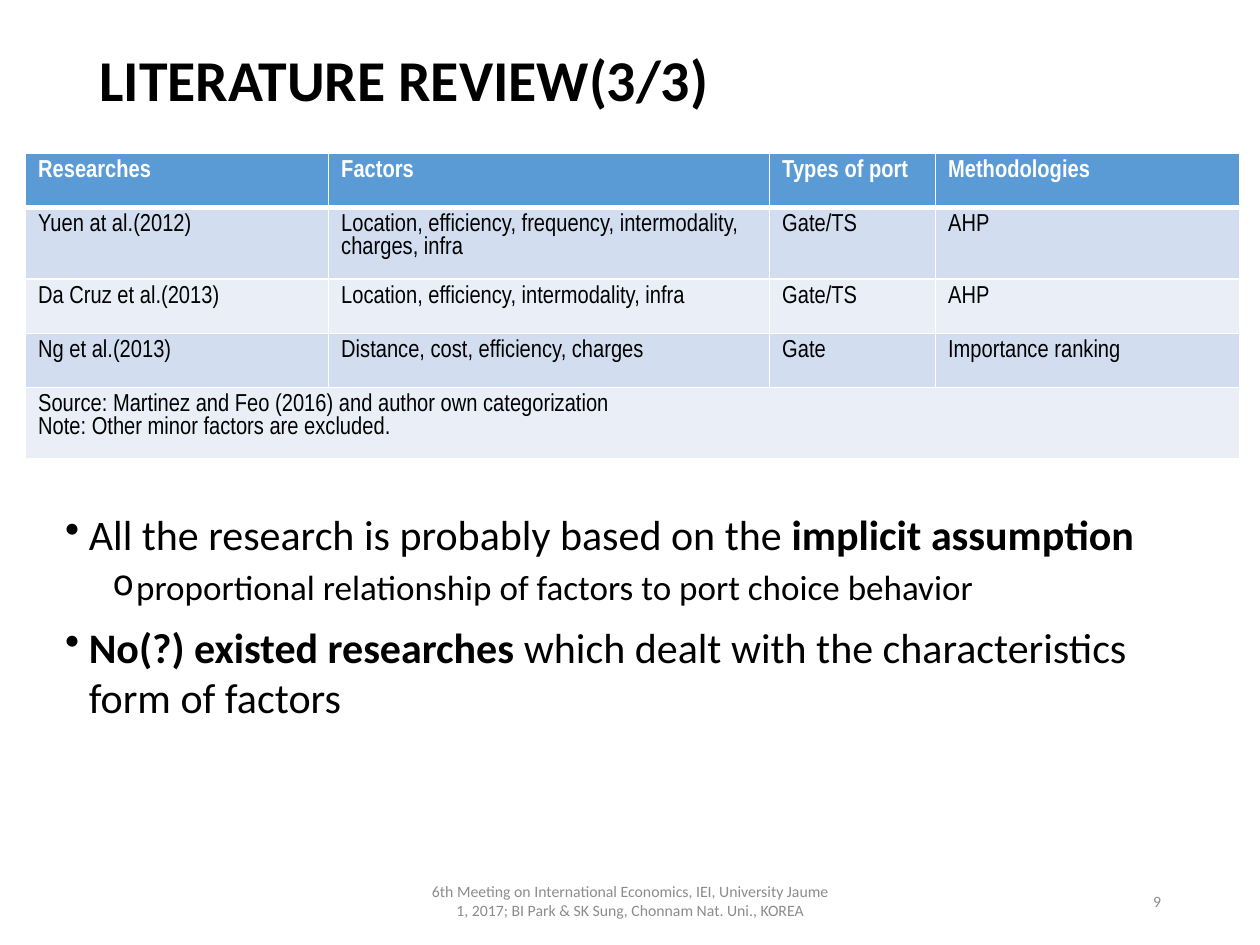
from dataclasses import dataclass

from lxml import etree
from pptx import Presentation
from pptx.dml.color import RGBColor
from pptx.enum.text import MSO_ANCHOR, PP_ALIGN
from pptx.oxml.ns import qn
from pptx.util import Pt

TOP, MID = MSO_ANCHOR.TOP, MSO_ANCHOR.MIDDLE
LEFT, MIDST, RIGHT = PP_ALIGN.LEFT, PP_ALIGN.CENTER, PP_ALIGN.RIGHT
BLACK = RGBColor(0x00, 0x00, 0x00)
WHITE = RGBColor(0xFF, 0xFF, 0xFF)
GRAY = RGBColor(0x8C, 0x8C, 0x8C)
BLUE = RGBColor(0x5B, 0x9B, 0xD5)
BANDS = (RGBColor(0xD2, 0xDE, 0xEF), RGBColor(0xEA, 0xEF, 0xF7))
SANS, NARROW = "Calibri", "Arial Narrow"
HANG = 13.5


@dataclass(frozen=True)
class Box:
    left: float
    top: float
    width: float
    height: float


@dataclass(frozen=True)
class Label:
    box: Box
    text: str
    size: float
    color: RGBColor
    bold: bool = False
    align: PP_ALIGN = LEFT
    lines: float = 1.0


@dataclass(frozen=True)
class Point:
    runs: tuple[tuple[str, bool], ...]
    mark: str
    size: float
    indent: float
    before: float
    level: int = 0


LABELS = (
    Label(Box(49.7, 20.2, 620.6, 54), "LITERATURE REVIEW(3/3)", 33, BLACK, True, lines=0.9),
    Label(Box(238.5, 500.5, 243, 28.8),
          "6th Meeting on International Economics, IEI, University Jaume 1, 2017; "
          "BI Park & SK Sung, Chonnam Nat. Uni., KOREA", 9, GRAY, align=MIDST),
    Label(Box(508.5, 500.5, 162, 28.8), "9", 9, GRAY, align=RIGHT),
)
BODY = Box(30.2, 287.3, 661.7, 195)
POINTS = (
    Point((("All the research is probably based on the ", False),
           ("implicit assumption", True)), "•", 24, HANG, 7.5),
    Point((("proportional relationship of factors to port choice behavior", False),),
          "o", 20, 40.5, 3.75, 1),
    Point((("No(?) existed researches", True),
           (" which dealt with the characteristics form of factors", False)),
          "•", 24, HANG, 7.5),
)
GRID = Box(14.6, 87.8, 693.6, 154.5)
COLS = (173.2, 252, 94.8, 173.6)
ROW = 30.9
ROWS = (
    ("Researches", "Factors", "Types of port", "Methodologies"),
    ("Yuen at al.(2012)", "Location, efficiency, frequency, intermodality, charges, infra",
     "Gate/TS", "AHP"),
    ("Da Cruz et al.(2013)", "Location, efficiency, intermodality, infra", "Gate/TS", "AHP"),
    ("Ng et al.(2013)", "Distance, cost, efficiency, charges", "Gate", "Importance ranking"),
    ("Source: Martinez and Feo (2016) and author own categorization\n"
     "Note: Other minor factors are excluded.",),
)


def add_frame(slide, box: Box, anchor: MSO_ANCHOR):
    shape = slide.shapes.add_textbox(Pt(box.left), Pt(box.top), Pt(box.width), Pt(box.height))
    frame = shape.text_frame
    frame.word_wrap = True
    frame.vertical_anchor = anchor
    return frame


def set_font(font, name: str, size: float, color: RGBColor) -> None:
    font.name = name
    font.size = Pt(size)
    font.color.rgb = color


def draw_label(slide, label: Label) -> None:
    para = add_frame(slide, label.box, MID).paragraphs[0]
    para.text = label.text
    para.alignment = label.align
    para.line_spacing = label.lines
    set_font(para.font, SANS, label.size, label.color)
    para.font.bold = label.bold


def draw_points(slide, box: Box, points: tuple[Point, ...]) -> None:
    frame = add_frame(slide, box, TOP)
    for i, point in enumerate(points):
        para = frame.add_paragraph() if i else frame.paragraphs[0]
        para.level = point.level
        para.space_before = Pt(point.before)
        set_font(para.font, SANS, point.size, BLACK)
        for text, bold in point.runs:
            run = para.add_run()
            run.text = text
            run.font.bold = bold
        props = para._p.get_or_add_pPr()
        props.set("marL", str(Pt(point.indent)))
        props.set("indent", str(-Pt(HANG)))
        mark = etree.Element(qn("a:buChar"), char=point.mark)
        props.find(qn("a:defRPr")).addprevious(mark)


def set_edges(cell, base: float) -> None:
    props = cell._tc.get_or_add_tcPr()
    for i, (side, width) in enumerate((("L", 1), ("R", 1), ("T", 1), ("B", base))):
        line = etree.Element(qn(f"a:ln{side}"), w=str(Pt(width)))
        fill = etree.SubElement(line, qn("a:solidFill"))
        etree.SubElement(fill, qn("a:srgbClr"), val=str(WHITE))
        props.insert(i, line)


def draw_table(slide, box: Box) -> None:
    table = slide.shapes.add_table(len(ROWS), len(COLS), Pt(box.left), Pt(box.top),
                                   Pt(box.width), Pt(box.height)).table
    for col, width in zip(table.columns, COLS):
        col.width = Pt(width)
    for r, texts in enumerate(ROWS):
        head = r == 0
        table.rows[r].height = Pt(ROW)
        if len(texts) == 1:
            table.cell(r, 0).merge(table.cell(r, len(COLS) - 1))
        for c, text in enumerate(texts):
            cell = table.cell(r, c)
            cell.fill.solid()
            cell.fill.fore_color.rgb = BLUE if head else BANDS[(r - 1) % 2]
            set_edges(cell, 3 if head else 1)
            cell.text = text
            for para in cell.text_frame.paragraphs:
                set_font(para.font, NARROW, 14, WHITE if head else BLACK)
                para.font.bold = head


def main() -> None:
    deck = Presentation()
    deck.slide_width, deck.slide_height = Pt(720), Pt(540)
    slide = deck.slides.add_slide(deck.slide_layouts[6])
    for label in LABELS:
        draw_label(slide, label)
    draw_points(slide, BODY, POINTS)
    draw_table(slide, GRID)
    deck.save("out.pptx")


if __name__ == "__main__":
    main()
